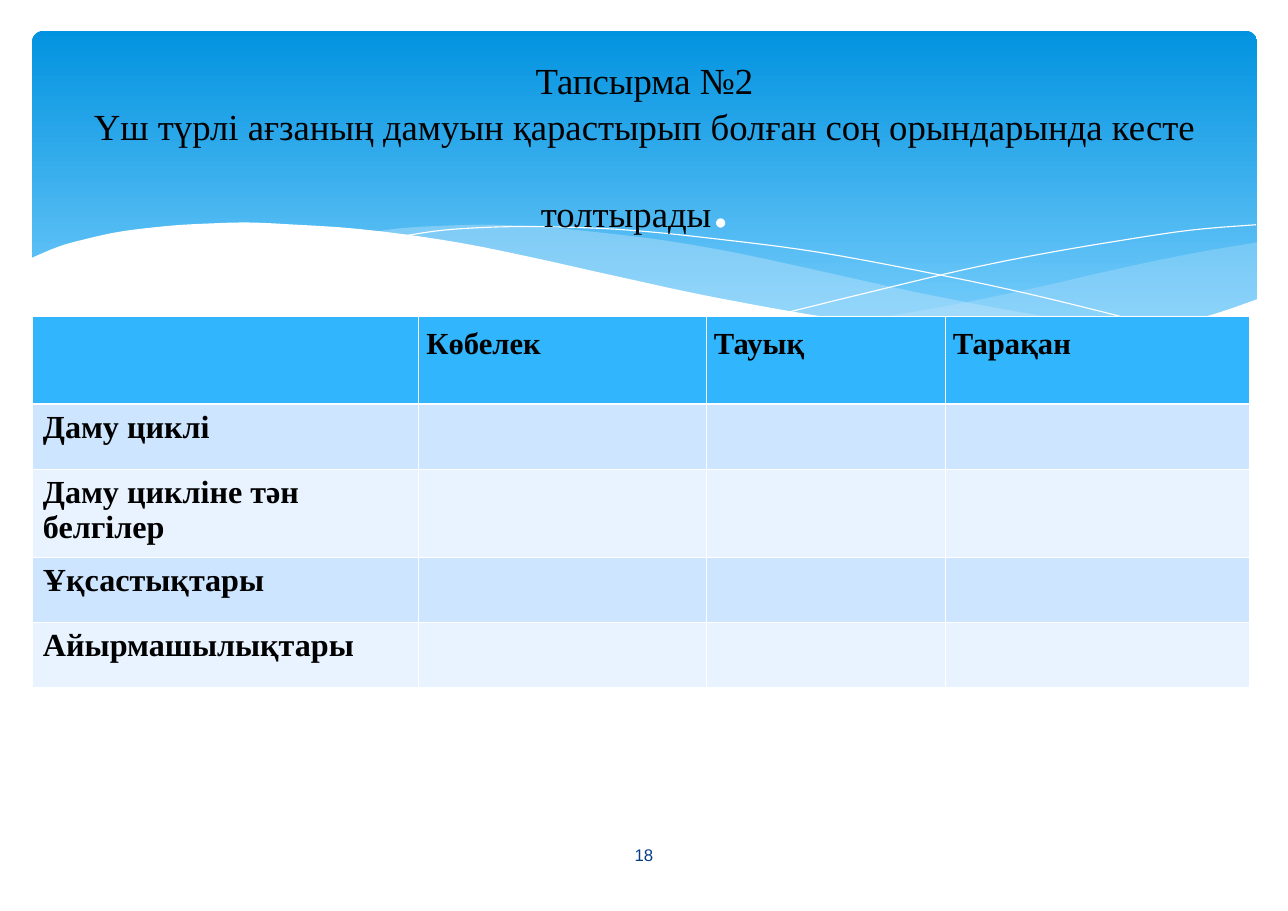
from lxml import etree
from pptx import Presentation
from pptx.dml.color import RGBColor
from pptx.enum.shapes import MSO_SHAPE
from pptx.enum.text import MSO_ANCHOR, MSO_AUTO_SIZE, PP_ALIGN
from pptx.oxml import parse_xml
from pptx.oxml.ns import nsdecls, qn
from pptx.util import Inches, Pt

SERIF = "Times New Roman"
HEADER = ["", "Көбелек", "Тауық", "Тарақан"]
ROW_LABELS = ["Даму циклі", "Даму цикліне тән белгілер",
              "Ұқсастықтары", "Айырмашылықтары"]
COL_WIDTHS = [3.51, 2.61, 2.17, 2.76]
ROW_HEIGHTS = [0.8, 0.59, 0.8, 0.59, 0.59]

# Wave edges: a few points each, joined by smooth curves
RIGHT_TOP = [(11.41, 2.2), (10.77, 2.31), (10.06, 2.46), (9.41, 2.61),
             (8.53, 2.79), (7.73, 2.92)]
RIGHT_BOTTOM = [(7.73, 2.92), (8.4, 3), (8.99, 3.05), (9.52, 3.06),
                (10.09, 3.03), (10.59, 2.96), (11.02, 2.86), (11.41, 2.72)]
MIDDLE_TOP = [(10.44, 3.01), (9.79, 2.92), (9.07, 2.8), (8.25, 2.64),
              (7.35, 2.44), (6.65, 2.29), (6.01, 2.18), (5.43, 2.11),
              (4.91, 2.06), (4.44, 2.04), (4.02, 2.05), (3.66, 2.07),
              (3.35, 2.11)]
MIDDLE_BOTTOM = [(3.35, 2.11), (4, 2.2), (4.73, 2.33), (5.74, 2.55),
                 (6.62, 2.74), (7.42, 2.88), (8.12, 2.98), (8.75, 3.04),
                 (9.44, 3.07), (10.03, 3.05), (10.44, 3.01)]
LONG_LINE = [(3.62, 2.15), (4.02, 2.09), (4.53, 2.06), (5.06, 2.06),
             (5.72, 2.09), (6.51, 2.17), (7.43, 2.29), (8.5, 2.49),
             (9.3, 2.66), (10.16, 2.87), (10.61, 2.99)]
SHORT_LINE = [(7.17, 2.83), (7.86, 2.66), (8.74, 2.45), (9.43, 2.31),
              (10.13, 2.19), (10.8, 2.09), (11.4, 2.04)]
FRONT_TOP = [(11.43, 2.71), (10.99, 2.86), (10.51, 2.97), (9.94, 3.03),
             (9.28, 3.05), (8.5, 3), (7.57, 2.89), (6.49, 2.7), (5.56, 2.5),
             (4.89, 2.35), (4.26, 2.22), (3.69, 2.13), (3.16, 2.07),
             (2.69, 2.04), (2.26, 2.02), (1.88, 2.03), (1.54, 2.05),
             (1.11, 2.1), (0.78, 2.17), (0.53, 2.24), (0.27, 2.35)]
FRONT_BASE = [(0.27, 3.63), (11.43, 3.63)]


def rgb(color):
    return RGBColor.from_string(color)


def set_font(r, name, size, color, bold=False):
    r.font.name, r.font.size, r.font.bold = name, Pt(size), bold
    r.font.color.rgb = rgb(color)


def smooth(points, steps=5):
    """Return points on a Catmull-Rom curve through the given points."""
    padded = [points[0], *points, points[-1]]
    curve = [points[0]]
    for a, b, c, d in zip(padded, padded[1:], padded[2:], padded[3:]):
        for i in range(1, steps + 1):
            t = i / steps
            curve.append(tuple(
                (2 * q + (r - p) * t + (2 * p - 5 * q + 4 * r - w) * t ** 2
                 + (3 * q - p - 3 * r + w) * t ** 3) / 2
                for p, q, r, w in zip(a, b, c, d)))
    return curve


def add_outline(s, points, closed):
    pts = [(Inches(x), Inches(y)) for x, y in points]
    builder = s.shapes.build_freeform(*pts[0])
    builder.add_line_segments(pts[1:], close=closed)
    sp = builder.convert_to_shape()
    sp.shadow.inherit = False
    return sp


def add_wave(s, points, color, opacity=100):
    sp = add_outline(s, points, True)
    sp.fill.solid()
    sp.fill.fore_color.rgb = rgb(color)
    sp.line.fill.background()
    if opacity < 100:
        clr = sp.element.spPr.find(qn("a:solidFill")).find(qn("a:srgbClr"))
        etree.SubElement(clr, qn("a:alpha")).set("val", str(opacity * 1000))


def add_wave_line(s, points):
    sp = add_outline(s, smooth(points), False)
    sp.fill.background()
    sp.line.color.rgb = rgb("FFFFFF")
    sp.line.width = Pt(0)


def add_banner(s):
    sp = s.shapes.add_shape(MSO_SHAPE.ROUNDED_RECTANGLE, Inches(0.29),
                            Inches(0.28), Inches(11.12), Inches(2.98))
    sp.adjustments[0] = 0.034
    sp.shadow.inherit = False
    sp.line.fill.background()
    sp.fill.gradient()
    sp.fill.gradient_angle = 270
    for stop, position, color in zip(sp.fill.gradient_stops, (0, 1),
                                     ("0293E0", "83D3FE")):
        stop.position = position
        stop.color.rgb = rgb(color)


def add_title(s):
    sp = s.shapes.title
    sp.element.getparent().append(sp.element)  # in front of the waves
    sp.left, sp.top = Inches(0.61), Inches(0.41)
    sp.width, sp.height = Inches(10.48), Inches(1.41)
    tf = sp.text_frame
    tf.text = ("Тапсырма №2\vҮш түрлі ағзаның дамуын қарастырып болған соң "
               "орындарында кесте толтырады")
    tf.auto_size = MSO_AUTO_SIZE.NONE
    tf.vertical_anchor = MSO_ANCHOR.TOP
    tf.margin_left = tf.margin_right = Inches(0.11)
    tf.margin_top = Inches(0.1)
    p = tf.paragraphs[0]
    p.alignment = PP_ALIGN.CENTER
    p.line_spacing = 1.04
    for r in p.runs:
        set_font(r, SERIF, 24, "000000")
    r = p.add_run()
    r.text = ". "
    set_font(r, "Calibri", 50, "FFFFFF")


def add_slide_number(s):
    sp = s.shapes.add_textbox(Inches(5.1), Inches(7.54),
                              Inches(1.49), Inches(0.44))
    tf = sp.text_frame
    tf.word_wrap = True
    tf.vertical_anchor = MSO_ANCHOR.MIDDLE
    tf.text = "18"
    p = tf.paragraphs[0]
    p.alignment = PP_ALIGN.CENTER
    set_font(p.runs[0], "Arial", 11, "073E87")


def set_borders(cell, **widths):
    tc_pr = cell._tc.get_or_add_tcPr()
    for side in "LRTB":
        width = Pt(widths.get(side, 0.45))
        tc_pr.append(parse_xml(
            f'<a:ln{side} {nsdecls("a")} w="{width}"><a:solidFill>'
            f'<a:srgbClr val="FFFFFF"/></a:solidFill></a:ln{side}>'))


def fill_cell(cell, row, text):
    heavy = {0: {"B": 1.47}, 1: {"T": 1.47}}
    set_borders(cell, **heavy.get(row, {}))
    cell.fill.solid()
    band = "CDE5FE" if row % 2 else "E8F3FF"
    cell.fill.fore_color.rgb = rgb("31B6FD" if row == 0 else band)
    if not text:
        return
    cell.text_frame.text = text
    p = cell.text_frame.paragraphs[0]
    if row == 0:
        cell.margin_left = cell.margin_right = Inches(0.07)
        p.line_spacing = 1.15
    set_font(p.runs[0], SERIF, 21 if row else 20, "000000", True)


def add_cycle_table(s):
    rows = [HEADER] + [[label, "", "", ""] for label in ROW_LABELS]
    table = s.shapes.add_table(len(rows), len(HEADER), Inches(0.29),
                               Inches(2.87), Inches(sum(COL_WIDTHS)),
                               Inches(sum(ROW_HEIGHTS))).table
    for col, width in zip(table.columns, COL_WIDTHS):
        col.width = Inches(width)
    for row, height in zip(table.rows, ROW_HEIGHTS):
        row.height = Inches(height)
    for i, texts in enumerate(rows):
        for j, text in enumerate(texts):
            fill_cell(table.cell(i, j), i, text)


def main():
    prs = Presentation()
    prs.slide_width, prs.slide_height = Inches(11.69), Inches(8.27)
    s = prs.slides.add_slide(prs.slide_layouts[5])
    # Banner and waves
    add_banner(s)
    add_wave(s, smooth(RIGHT_TOP) + smooth(RIGHT_BOTTOM), "C6E7FC", 29)
    add_wave(s, smooth(MIDDLE_TOP) + smooth(MIDDLE_BOTTOM), "C6E7FC", 40)
    add_wave_line(s, LONG_LINE)
    add_wave_line(s, SHORT_LINE)
    add_wave(s, smooth(FRONT_TOP) + FRONT_BASE, "FFFFFF")
    # Content
    add_title(s)
    add_slide_number(s)
    add_cycle_table(s)
    prs.save("out.pptx")


if __name__ == "__main__":
    main()
